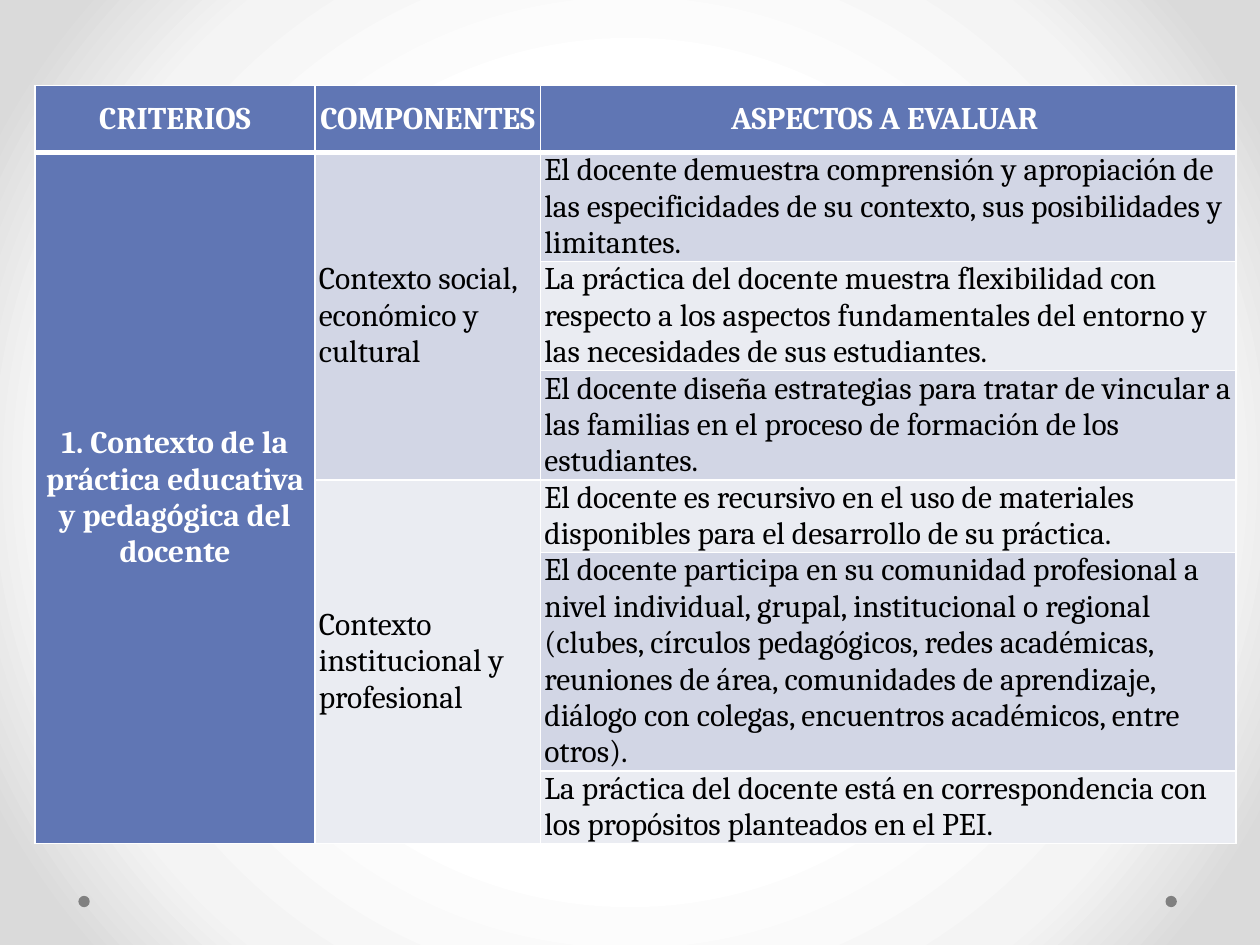
import lxml.etree
import pptx
import pptx.dml.color
import pptx.enum.shapes
import pptx.enum.text
import pptx.oxml
import pptx.oxml.ns
import pptx.util

Pt = pptx.util.Pt
qn = pptx.oxml.ns.qn

BLUE, WHITE, BLACK, GRAY = "6076B4", "FFFFFF", "000000", "808080"
BANDS = ("D2D6E5", "EAECF2")
HEADERS = ("CRITERIOS", "COMPONENTES", "ASPECTOS A EVALUAR ")
CRITERION = "1. Contexto de la práctica educativa y pedagógica del docente"
COMPONENTS = ("Contexto social, económico y cultural", "Contexto institucional y profesional")
ASPECTS = (
    ("El docente demuestra comprensión y apropiación de las especificidades de su contexto, "
     "sus posibilidades y limitantes.", 3),
    ("La práctica del docente muestra flexibilidad con respecto a los aspectos fundamentales "
     "del entorno y las necesidades de sus estudiantes.", 3),
    ("El docente diseña estrategias para tratar de vincular a las familias en el proceso de "
     "formación de los estudiantes.", 3),
    ("El docente es recursivo en el uso de materiales disponibles para el desarrollo de su "
     "práctica.", 2),
    ("El docente participa en su comunidad profesional a nivel individual, grupal, "
     "institucional o regional (clubes, círculos pedagógicos, redes académicas, reuniones de "
     "área, comunidades de aprendizaje, diálogo con colegas, encuentros académicos, entre "
     "otros).", 6),
    ("La práctica del docente está en correspondencia con los propósitos planteados en el "
     "PEI.", 2),
)
COLUMN_WIDTHS = (160, 128.9, 397.3)
HEADER_HEIGHT = 38.2
LINE_HEIGHT = 20.75
ROWS_PER_COMPONENT = 3


def color(value):
    return pptx.dml.color.RGBColor.from_string(value)


def set_background(slide, stops):
    slide.background.fill.solid()
    properties = slide.element.find(".//" + qn("p:bgPr"))
    gradient = pptx.oxml.parse_xml(
        f'<a:gradFill {pptx.oxml.ns.nsdecls("a")} rotWithShape="1"><a:gsLst>'
        + "".join(f'<a:gs pos="{position * 1000}"><a:srgbClr val="{value}"/></a:gs>'
                  for position, value in stops)
        + '</a:gsLst><a:path path="circle"><a:fillToRect l="50000" t="50000" '
        'r="50000" b="50000"/></a:path></a:gradFill>')
    properties.replace(properties.find(qn("a:solidFill")), gradient)


def add_dot(slide, left):
    dot = slide.shapes.add_shape(
        pptx.enum.shapes.MSO_SHAPE.OVAL, Pt(left), Pt(511.9), Pt(6.5), Pt(6.5))
    dot.shadow.inherit = False
    dot.fill.solid()
    dot.fill.fore_color.rgb = color(GRAY)
    dot.line.fill.background()


def set_borders(cell, bottom_width):
    properties = cell._tc.get_or_add_tcPr()
    widths = {"lnL": 1, "lnR": 1, "lnT": 1, "lnB": bottom_width}
    for index, (side, width) in enumerate(widths.items()):
        line = lxml.etree.Element(qn(f"a:{side}"), w=str(Pt(width)))
        fill = lxml.etree.SubElement(line, qn("a:solidFill"))
        lxml.etree.SubElement(fill, qn("a:srgbClr"), val=WHITE)
        properties.insert(index, line)


def format_cell(cell, fill, bottom_width=1):
    cell.fill.solid()
    cell.fill.fore_color.rgb = color(fill)
    cell.margin_left = cell.margin_right = Pt(2.2)
    cell.margin_top = cell.margin_bottom = 0
    cell.vertical_anchor = pptx.enum.text.MSO_ANCHOR.MIDDLE
    set_borders(cell, bottom_width)


def write_cell(cell, text, heading=False):
    cell.text_frame.text = text
    paragraph = cell.text_frame.paragraphs[0]
    alignment = pptx.enum.text.PP_ALIGN
    paragraph.alignment = alignment.CENTER if heading else alignment.LEFT
    font = paragraph.runs[0].font
    font.name = "Cambria"
    font.size = Pt(18)
    font.bold = heading
    font.color.rgb = color(WHITE if heading else BLACK)


def add_criteria_table(slide):
    heights = [HEADER_HEIGHT] + [lines * LINE_HEIGHT for _, lines in ASPECTS]
    table = slide.shapes.add_table(
        len(heights), len(COLUMN_WIDTHS), Pt(20), Pt(48.9),
        Pt(sum(COLUMN_WIDTHS)), Pt(sum(heights))).table
    for column, width in zip(table.columns, COLUMN_WIDTHS):
        column.width = Pt(width)
    for row, height in zip(table.rows, heights):
        row.height = Pt(height)

    for column, header in enumerate(HEADERS):
        format_cell(table.cell(0, column), BLUE, bottom_width=3)
        write_cell(table.cell(0, column), header, heading=True)
    for index, (aspect, _) in enumerate(ASPECTS):
        component_band = BANDS[index // ROWS_PER_COMPONENT]
        for column, fill in enumerate((BLUE, component_band, BANDS[index % 2])):
            format_cell(table.cell(index + 1, column), fill)
        write_cell(table.cell(index + 1, 2), aspect)

    table.cell(1, 0).merge(table.cell(len(ASPECTS), 0))
    write_cell(table.cell(1, 0), CRITERION, heading=True)
    for index, component in enumerate(COMPONENTS):
        first = 1 + index * ROWS_PER_COMPONENT
        table.cell(first, 1).merge(table.cell(first + ROWS_PER_COMPONENT - 1, 1))
        write_cell(table.cell(first, 1), component)


def main():
    presentation = pptx.Presentation()
    presentation.slide_width = Pt(720)
    presentation.slide_height = Pt(540)
    slide = presentation.slides.add_slide(presentation.slide_layouts[6])
    set_background(slide, ((50, "FFFFFF"), (76, "F4F4F4"), (92, "DADADA")))
    for left in (666, 44.8):
        add_dot(slide, left)
    add_criteria_table(slide)
    presentation.save("out.pptx")


if __name__ == "__main__":
    main()
